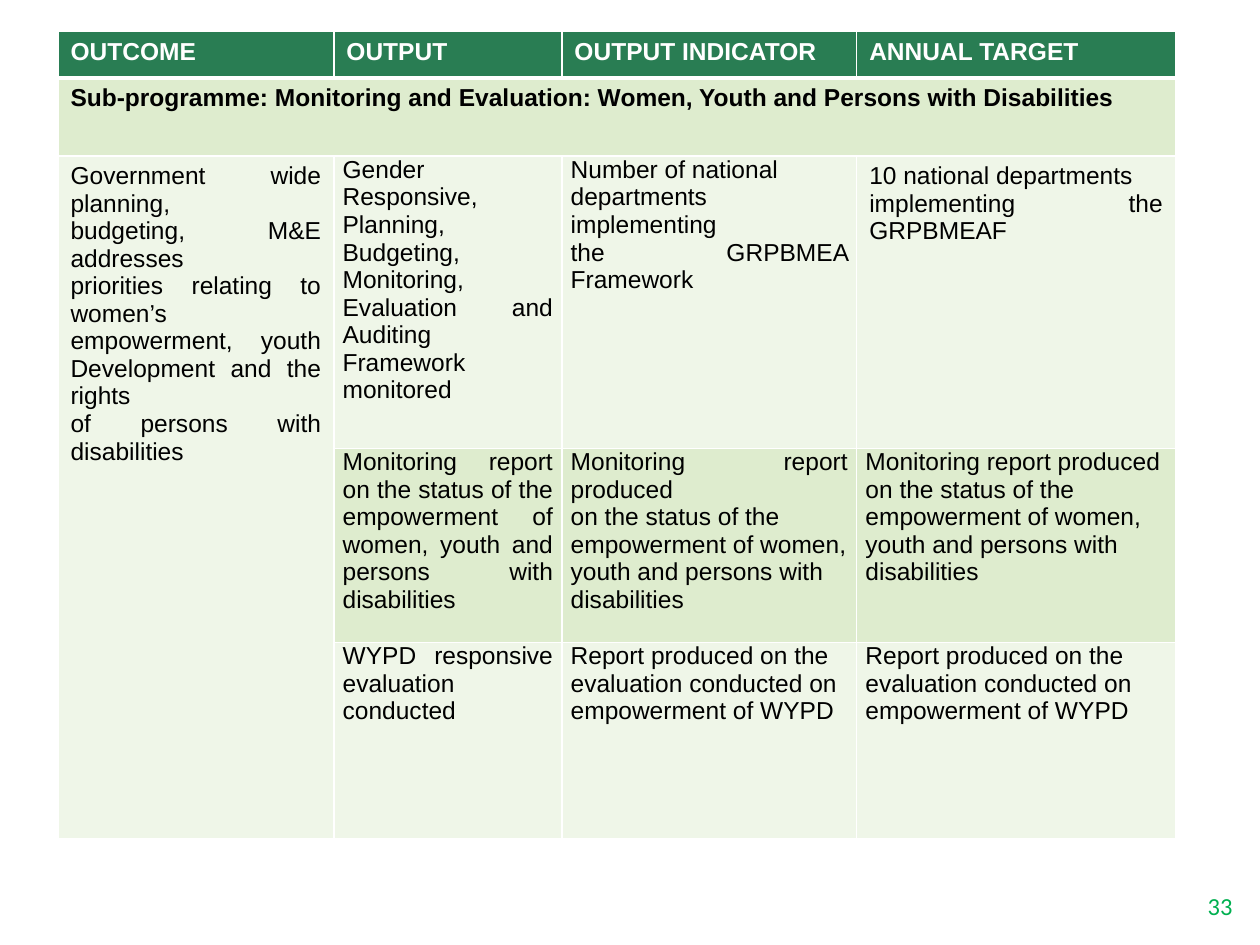
"""Build the monitoring and evaluation target table slide."""
from lxml import etree
from pptx import Presentation
from pptx import util as u
from pptx.dml.color import RGBColor
from pptx.enum import text
from pptx.oxml.ns import qn

DARK_GREEN = RGBColor(0x29, 0x7D, 0x53)
MID_GREEN = RGBColor(0xDE, 0xEC, 0xCE)
PALE_GREEN = RGBColor(0xEF, 0xF6, 0xE8)
NUMBER_GREEN = RGBColor(0x00, 0xB0, 0x50)
WHITE = RGBColor(0xFF, 0xFF, 0xFF)
BLACK = RGBColor(0x00, 0x00, 0x00)

REPORT = ["Monitoring report produced", "on the status of the", "empowerment of women,",
          "youth and persons with", "disabilities"]
EVALUATION = ["Report produced on the", "evaluation conducted on", "empowerment of WYPD"]
ROWS = [
    [["OUTCOME"], ["OUTPUT"], ["OUTPUT INDICATOR"], ["ANNUAL TARGET"]],
    [["Sub-programme: Monitoring and Evaluation: Women, Youth and Persons with Disabilities"],
     [], [], []],
    [["Government wide planning,", "budgeting, M&E addresses", "priorities relating to women’s",
      "empowerment, youth Development and the rights", "of persons with disabilities"],
     ["Gender Responsive, Planning, Budgeting, Monitoring, Evaluation and Auditing "
      "Framework monitored"],
     ["Number of national", "departments implementing", "the GRPBMEA Framework"],
     ["10 national departments", "implementing the GRPBMEAF"]],
    [[], ["Monitoring report on the status of the empowerment of women, youth and persons "
          "with disabilities"], REPORT, REPORT],
    [[], ["WYPD responsive evaluation conducted"], EVALUATION, EVALUATION],
]
ROW_FILLS = [DARK_GREEN, MID_GREEN, PALE_GREEN, MID_GREEN, PALE_GREEN]
COLUMN_WIDTHS = [2.19, 1.81, 2.34, 2.53]
ROW_HEIGHTS = [0.37, 0.62, 2.32, 1.54, 1.56]
MERGES = [((1, 0), (1, 3)), ((2, 0), (4, 0))]
ROOMY_CELLS = {(2, 0), (2, 3)}


def format_paragraph(paragraph, font_name, color, alignment, bold=False):
    paragraph.alignment = alignment
    for run in paragraph.runs:
        run.font.name = font_name
        run.font.size = u.Pt(14)
        run.font.bold = bold
        run.font.color.rgb = color


def add_borders(cell, bottom_width):
    properties = cell._tc.get_or_add_tcPr()
    widths = {"a:lnL": 1, "a:lnR": 1, "a:lnT": 1, "a:lnB": bottom_width}
    for position, (tag, width) in enumerate(widths.items()):
        line = etree.Element(qn(tag), w=str(u.Pt(width)))
        fill = etree.SubElement(line, qn("a:solidFill"))
        etree.SubElement(fill, qn("a:srgbClr"), val=str(WHITE))
        properties.insert(position, line)


def fill_cell(cell, lines, row, column):
    cell.fill.solid()
    cell.fill.fore_color.rgb = ROW_FILLS[row]
    add_borders(cell, 3 if row == 0 else 1)
    if row >= 2 and (row, column) not in ROOMY_CELLS:
        cell.margin_left = cell.margin_right = u.Inches(0.07)
        cell.margin_top = cell.margin_bottom = 0
    if lines:
        cell.text_frame.text = "\n".join(lines)
    for paragraph in cell.text_frame.paragraphs:
        format_paragraph(paragraph, "Arial", WHITE if row == 0 else BLACK,
                         text.PP_ALIGN.JUSTIFY, bold=row < 2)


def add_target_table(slide):
    frame = slide.shapes.add_table(
        len(ROWS), len(COLUMN_WIDTHS), u.Inches(0.46), u.Inches(0.25),
        u.Inches(sum(COLUMN_WIDTHS)), u.Inches(sum(ROW_HEIGHTS)))
    table = frame.table
    for column, width in zip(table.columns, COLUMN_WIDTHS):
        column.width = u.Inches(width)
    for row, height in zip(table.rows, ROW_HEIGHTS):
        row.height = u.Inches(height)
    for row, cells in enumerate(ROWS):
        for column, lines in enumerate(cells):
            fill_cell(table.cell(row, column), lines, row, column)
    for first, last in MERGES:
        table.cell(*first).merge(table.cell(*last))


def add_page_number(slide, number):
    box = slide.shapes.add_textbox(u.Inches(9.24), u.Inches(7.02), u.Inches(0.64), u.Inches(0.34))
    box.text_frame.word_wrap = True
    box.text_frame.text = number
    format_paragraph(box.text_frame.paragraphs[0], "Calibri", NUMBER_GREEN, text.PP_ALIGN.RIGHT)


def main():
    presentation = Presentation()
    presentation.slide_width = u.Inches(10)
    presentation.slide_height = u.Inches(7.5)
    slide = presentation.slides.add_slide(presentation.slide_layouts[6])
    add_page_number(slide, "33")
    add_target_table(slide)
    presentation.save("out.pptx")


if __name__ == "__main__":
    main()
